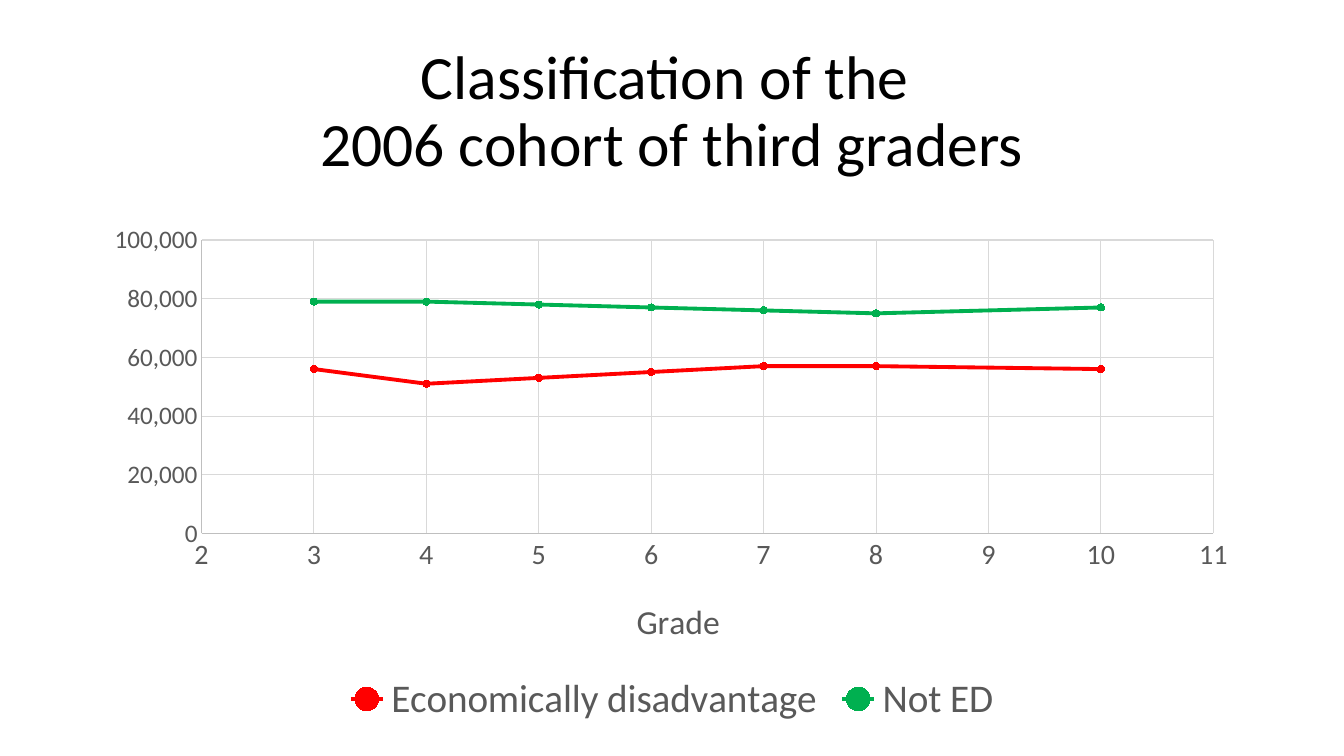
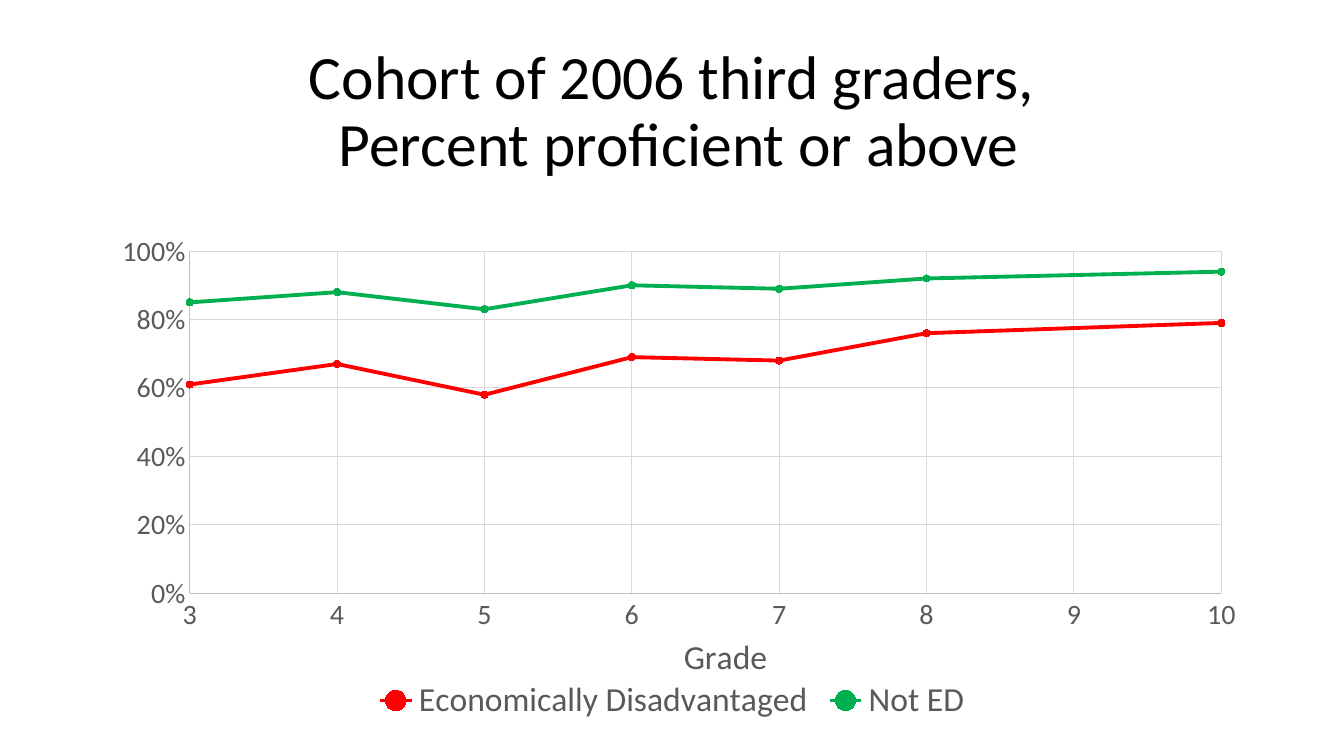
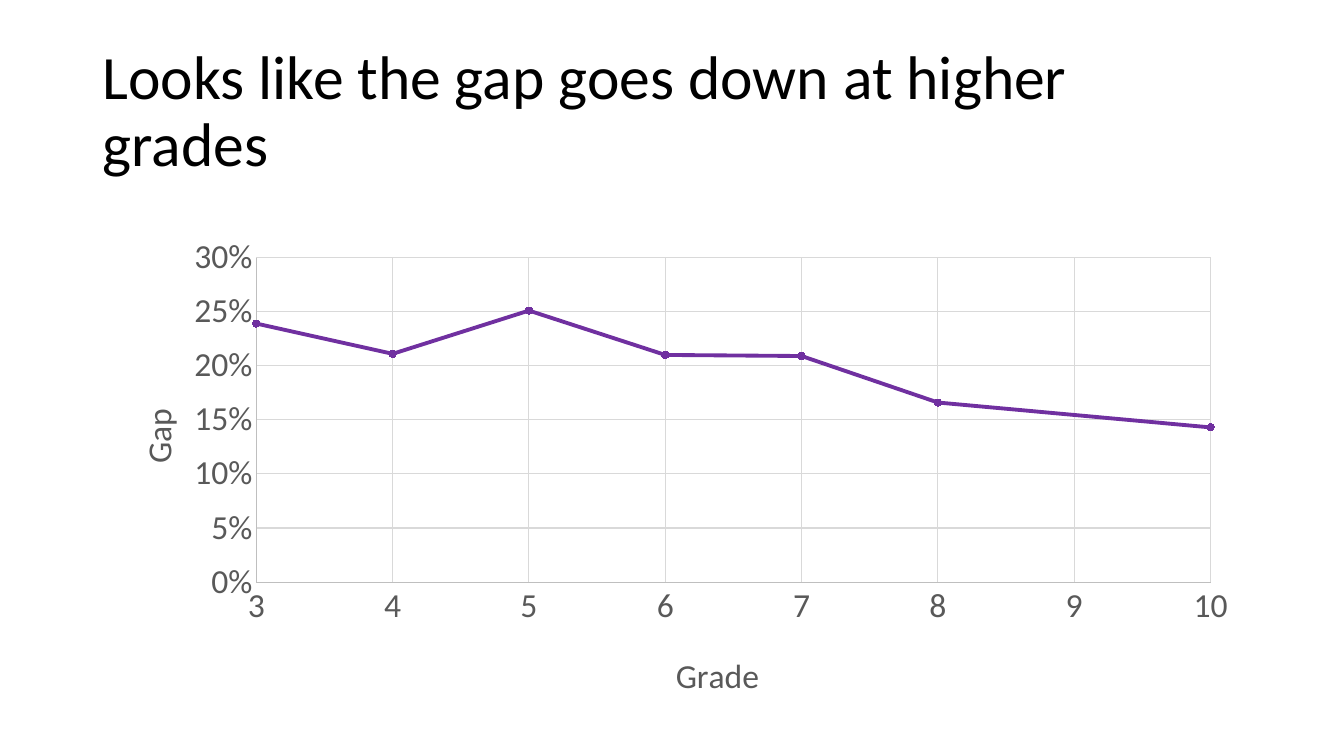
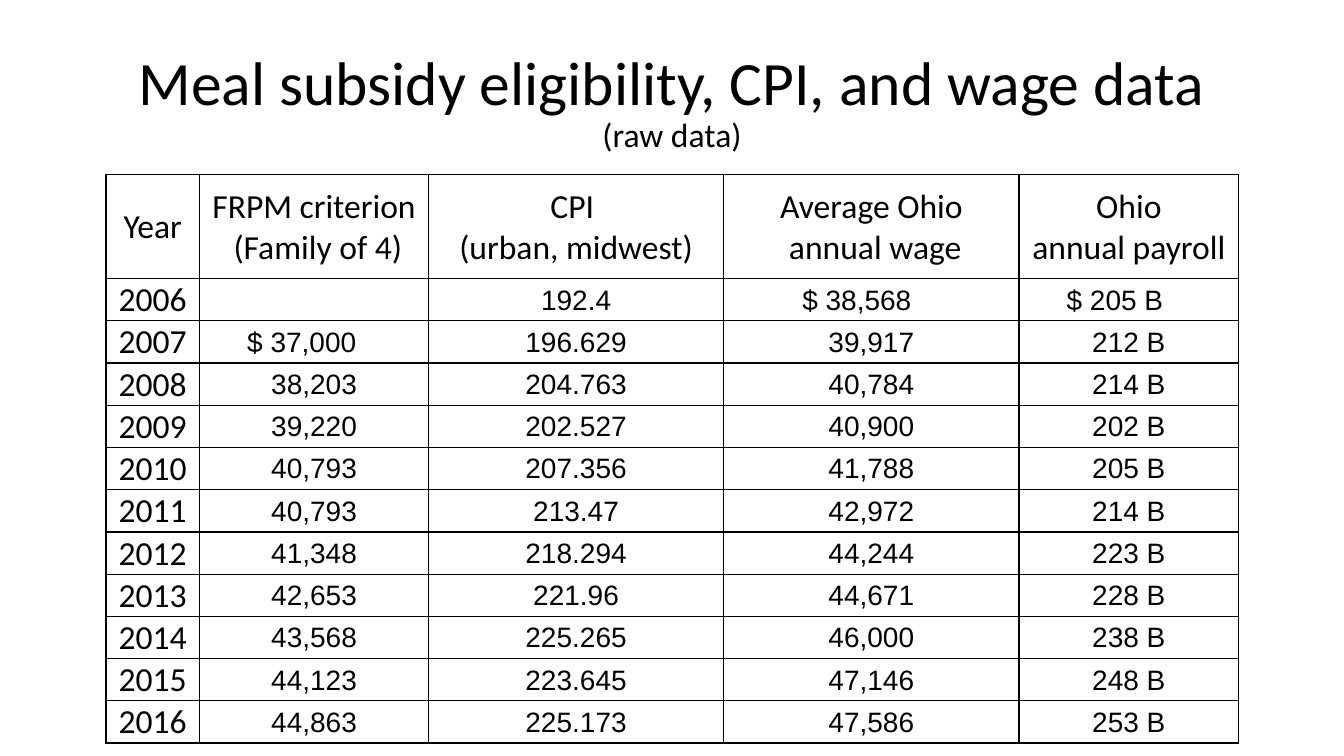
import lxml.etree
import pptx
import pptx.chart.data
import pptx.dml.color
import pptx.enum.chart
import pptx.enum.text
import pptx.oxml.ns
import pptx.util

Cm = pptx.util.Cm
Pt = pptx.util.Pt
RGBColor = pptx.dml.color.RGBColor
PP_ALIGN = pptx.enum.text.PP_ALIGN
MSO_ANCHOR = pptx.enum.text.MSO_ANCHOR
XL = pptx.enum.chart
qn = pptx.oxml.ns.qn

BLACK = RGBColor(0x00, 0x00, 0x00)
GRAY = RGBColor(0x59, 0x59, 0x59)
AXIS_GRAY = RGBColor(0xBF, 0xBF, 0xBF)
GRID_GRAY = RGBColor(0xD9, 0xD9, 0xD9)
RED = RGBColor(0xFF, 0x00, 0x00)
GREEN = RGBColor(0x00, 0xB0, 0x50)
PURPLE = RGBColor(0x70, 0x30, 0xA0)

BODY_FONT = "Calibri"
DATA_FONT = "Arial"
TITLE_BOX = (2.33, 1.01, 29.21, 3.68)
GRADES = (3, 4, 5, 6, 7, 8, 10)

CHART_SLIDES = [
    {
        "title": "Classification of the \v2006 cohort of third graders",
        "align": PP_ALIGN.CENTER,
        "box": (2.33, 5.41, 29.21, 13),
        "plot": (2.75, 0.64, 25.5, 7.39),
        "x_axis": {"minimum_scale": 2, "maximum_scale": 11, "major_unit": 1},
        "y_axis": {"minimum_scale": 0, "maximum_scale": 100000, "major_unit": 20000},
        "format": "#,##0",
        "sizes": (20, 18),
        "x_title": ("Grade", 13.56, 9.53),
        "legend_size": 28,
        "series": [
            ("Economically disadvantage", RED,
             (56000, 51000, 53000, 55000, 57000, 57000, 56000)),
            ("Not ED", GREEN,
             (79000, 79000, 78000, 77000, 76000, 75000, 77000)),
        ],
    },
    {
        "title": "Cohort of 2006 third graders,\v Percent proficient or above",
        "align": PP_ALIGN.CENTER,
        "box": (2.33, 5.72, 29.21, 12.62),
        "plot": (2.45, 0.61, 26, 8.62),
        "x_axis": {"minimum_scale": 3, "maximum_scale": 10, "major_unit": 1},
        "y_axis": {"minimum_scale": 0, "maximum_scale": 1, "major_unit": 0.2},
        "format": "0%",
        "sizes": (20, 20),
        "x_title": ("Grade", 14.75, 10.1),
        "legend_size": 24,
        "series": [
            ("Economically Disadvantaged", RED,
             (0.61, 0.67, 0.58, 0.69, 0.68, 0.76, 0.79)),
            ("Not ED", GREEN, (0.85, 0.88, 0.83, 0.9, 0.89, 0.92, 0.94)),
        ],
    },
    {
        "title": "Looks like the gap goes down at higher grades",
        "align": PP_ALIGN.LEFT,
        "box": (2.33, 5.72, 29.21, 12.29),
        "plot": (4.13, 0.77, 24.05, 8.18),
        "x_axis": {"minimum_scale": 3, "maximum_scale": 10, "major_unit": 1},
        "y_axis": {"minimum_scale": 0, "maximum_scale": 0.3, "major_unit": 0.05},
        "format": "0%",
        "sizes": (24, 24),
        "x_title": ("Grade", 14.55, 10.59),
        "y_title": ("Gap", 0.94, 4.42),
        "series": [
            ("Series 1", PURPLE,
             (0.239, 0.211, 0.251, 0.21, 0.209, 0.166, 0.143)),
        ],
    },
]

COLUMN_WIDTHS = (2.36, 5.77, 7.44, 7.44, 5.54)
HEADERS = ("Year", "FRPM criterion\n (Family of 4)", "CPI \n(urban, midwest)",
           "Average Ohio\n annual wage", "Ohio\nannual payroll")
WAGE_ROWS = [
    ("2006", "", "192.4", "$ 38,568", "$ 205 B"),
    ("2007", "$ 37,000", "196.629", "39,917", "212 B"),
    ("2008", "38,203", "204.763", "40,784", "214 B"),
    ("2009", "39,220", "202.527", "40,900", "202 B"),
    ("2010", "40,793", "207.356", "41,788", "205 B"),
    ("2011", "40,793", "213.47", "42,972", "214 B"),
    ("2012", "41,348", "218.294", "44,244", "223 B"),
    ("2013", "42,653", "221.96", "44,671", "228 B"),
    ("2014", "43,568", "225.265", "46,000", "238 B"),
    ("2015", "44,123", "223.645", "47,146", "248 B"),
    ("2016", "44,863", "225.173", "47,586", "253 B"),
]
DOLLAR_INDENTS = {1: 1.2, 3: 1.98, 4: 1.2}  # column: left margin in cm


def assign(obj, values):
    for name, value in values.items():
        setattr(obj, name, value)


def set_font(font, size, color=GRAY, name=BODY_FONT):
    assign(font, {"size": Pt(size), "name": name, "bold": False})
    font.color.rgb = color


def set_line(line, color, width):
    line.color.rgb = color
    line.width = Pt(width)


def add_title_slide(prs, parts, align=PP_ALIGN.CENTER, box=TITLE_BOX):
    """Add a slide whose title is made of (text, size) parts."""
    slide = prs.slides.add_slide(prs.slide_layouts[5])
    sp = slide.shapes.title
    assign(sp, dict(zip(("left", "top", "width", "height"), map(Cm, box))))
    tf = sp.text_frame
    assign(tf, {"vertical_anchor": MSO_ANCHOR.MIDDLE, "word_wrap": True,
                "auto_size": pptx.enum.text.MSO_AUTO_SIZE.NONE})
    p = tf.paragraphs[0]
    assign(p, {"alignment": align, "line_spacing": 0.9})
    for i, (text, size) in enumerate(parts):
        if i:
            p.add_line_break()
        for j, line in enumerate(text.split("\v")):
            if j:
                p.add_line_break()
            r = p.add_run()
            r.text = line
            set_font(r.font, size, BLACK)
    return slide


def set_layout(parent, index, frame, box, inner=False):
    """Place a chart part by a box in cm, measured from the chart's corner."""
    for old in parent.findall(qn("c:layout")):
        parent.remove(old)
    layout = lxml.etree.Element(qn("c:layout"))
    manual = lxml.etree.SubElement(layout, qn("c:manualLayout"))
    settings = [("layoutTarget", "inner")] if inner else []
    settings += [("xMode", "edge"), ("yMode", "edge")]
    settings += [(key, str(round(value / frame[2 + i % 2], 4)))
                 for i, (key, value) in enumerate(zip("xywh", box))]
    for key, value in settings:
        lxml.etree.SubElement(manual, qn("c:" + key)).set("val", value)
    parent.insert(index, layout)


def format_axis(axis, scale, size):
    assign(axis, scale)
    assign(axis, {"has_major_gridlines": True,
                  "major_tick_mark": XL.XL_TICK_MARK.NONE,
                  "minor_tick_mark": XL.XL_TICK_MARK.NONE})
    set_font(axis.tick_labels.font, size)
    set_line(axis.format.line, AXIS_GRAY, 0.75)
    set_line(axis.major_gridlines.format.line, GRID_GRAY, 0.75)


def add_axis_title(axis, frame, text, x, y, rotated=False):
    title = axis.axis_title
    tf = title.text_frame
    tf.text = text
    set_font(tf.paragraphs[0].runs[0].font, 24)
    if rotated:
        body = title._element.find(".//" + qn("a:bodyPr"))
        body.set("rot", "-5400000")
        body.set("vert", "horz")
    set_layout(title._element, 1, frame, (x, y))


def add_grade_chart(slide, item):
    frame = item["box"]
    data = pptx.chart.data.XyChartData(number_format=item["format"])
    for name, _, values in item["series"]:
        series = data.add_series(name)
        for grade, value in zip(GRADES, values):
            series.add_data_point(grade, value)
    chart = slide.shapes.add_chart(
        XL.XL_CHART_TYPE.XY_SCATTER_LINES, *map(Cm, frame), data).chart
    chart.has_title = False
    set_font(chart.font, 20)
    plot = chart.plots[0]
    plot.vary_by_categories = False

    for series, (_, color, _) in zip(plot.series, item["series"]):
        series.smooth = False
        set_line(series.format.line, color, 2.75)
        marker = series.marker
        assign(marker, {"style": XL.XL_MARKER_STYLE.CIRCLE, "size": 5})
        marker.format.fill.solid()
        marker.format.fill.fore_color.rgb = color
        set_line(marker.format.line, color, 0.75)

    x_axis, y_axis = chart.category_axis, chart.value_axis
    x_size, y_size = item["sizes"]
    format_axis(x_axis, item["x_axis"], x_size)
    format_axis(y_axis, item["y_axis"], y_size)
    assign(x_axis.tick_labels, {"number_format": "General",
                                "number_format_is_linked": False})
    assign(y_axis.tick_labels, {"number_format": item["format"],
                                "number_format_is_linked": False})
    add_axis_title(x_axis, frame, *item["x_title"])
    if "y_title" in item:
        add_axis_title(y_axis, frame, *item["y_title"], rotated=True)

    chart.has_legend = "legend_size" in item
    if chart.has_legend:
        assign(chart.legend, {"position": XL.XL_LEGEND_POSITION.BOTTOM,
                              "include_in_layout": False})
        set_font(chart.legend.font, item["legend_size"])
    plot_area = chart._chartSpace.find(".//" + qn("c:plotArea"))
    set_layout(plot_area, 0, frame, item["plot"], inner=True)


def set_borders(cell):
    tc_pr = cell._tc.get_or_add_tcPr()
    for i, side in enumerate("LRTB"):
        ln = lxml.etree.Element(qn("a:ln" + side), w=str(Pt(1)))
        fill = lxml.etree.SubElement(ln, qn("a:solidFill"))
        lxml.etree.SubElement(fill, qn("a:srgbClr"), val=str(BLACK))
        tc_pr.insert(i, ln)


def fill_cell(cell, text, row, col):
    is_dollar = text.startswith("$")
    is_year = row > 0 and col == 0
    cell.fill.background()
    set_borders(cell)
    assign(cell, {
        "margin_left": Cm(DOLLAR_INDENTS[col] if is_dollar else 0.03),
        "margin_right": Cm(0.03),
        "margin_top": Cm(0.03),
        "margin_bottom": 0,
        "vertical_anchor": MSO_ANCHOR.BOTTOM if is_year else MSO_ANCHOR.MIDDLE,
    })
    cell.text = text
    for p in cell.text_frame.paragraphs:
        p.alignment = PP_ALIGN.LEFT if is_dollar else PP_ALIGN.CENTER
        for r in p.runs:
            if row == 0 or col == 0:
                set_font(r.font, 24, BLACK)
            else:
                set_font(r.font, 20, BLACK, DATA_FONT)


def add_wage_table(slide, left, top, header_height=2.62, row_height=1.05):
    rows = [HEADERS] + WAGE_ROWS
    height = header_height + row_height * len(WAGE_ROWS)
    table = slide.shapes.add_table(
        len(rows), len(HEADERS), Cm(left), Cm(top),
        Cm(sum(COLUMN_WIDTHS)), Cm(height)).table
    assign(table, {"first_row": False, "horz_banding": False})
    for column, width in zip(table.columns, COLUMN_WIDTHS):
        column.width = Cm(width)
    for i, texts in enumerate(rows):
        table.rows[i].height = Cm(row_height if i else header_height)
        for j, text in enumerate(texts):
            fill_cell(table.cell(i, j), text, i, j)


def main():
    prs = pptx.Presentation()
    assign(prs, {"slide_width": Cm(33.87), "slide_height": Cm(19.05)})
    for item in CHART_SLIDES:
        slide = add_title_slide(prs, [(item["title"], 44)], item["align"])
        add_grade_chart(slide, item)
    slide = add_title_slide(
        prs,
        [("Meal subsidy eligibility, CPI, and wage data", 44), ("(raw data)", 24)],
        box=(2.33, 0.51, 29.21, 4.19))
    add_wage_table(slide, 2.67, 4.4)
    prs.save("out.pptx")


if __name__ == "__main__":
    main()
